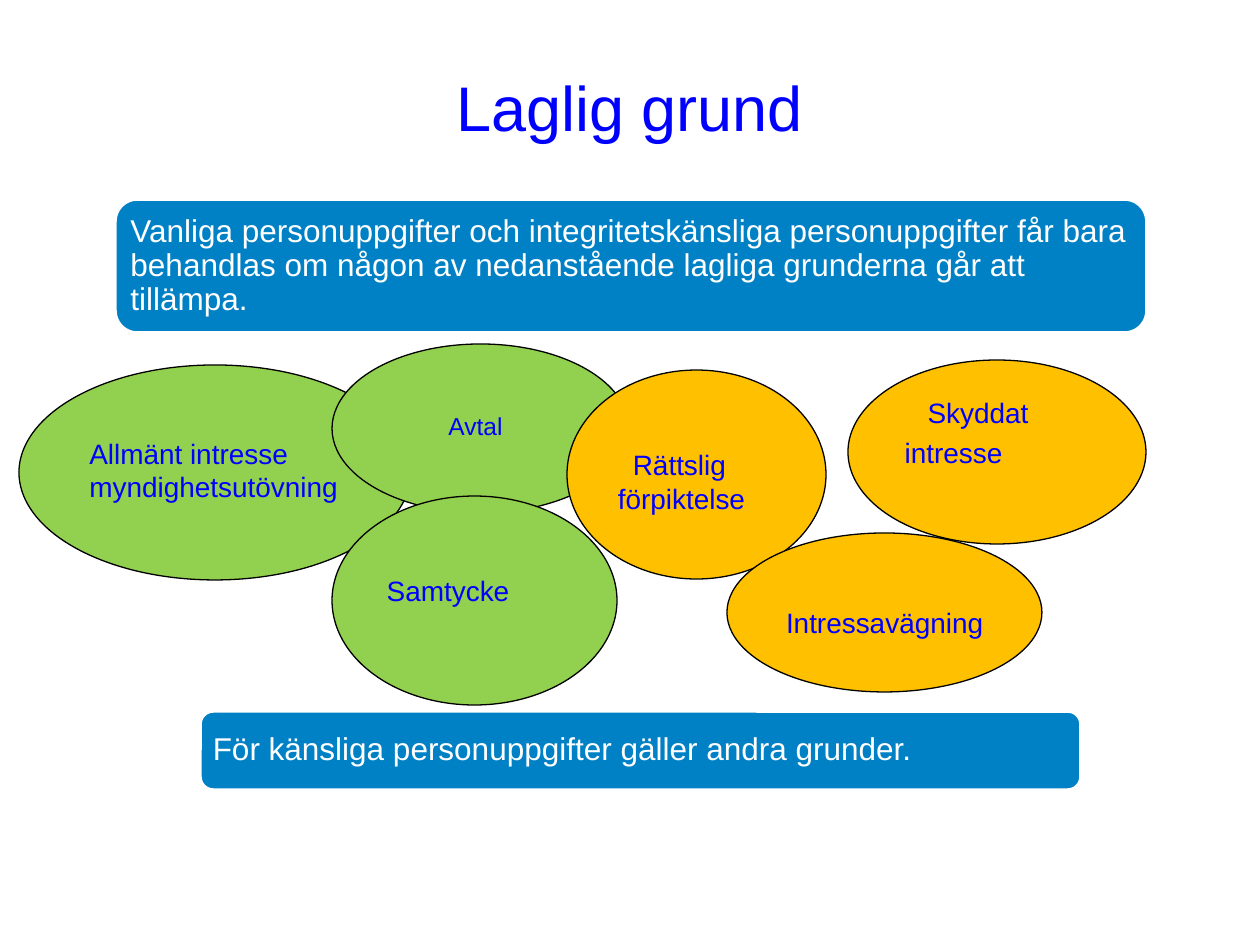
from pptx import Presentation
from pptx.dml.color import RGBColor
from pptx.enum.shapes import MSO_SHAPE
from pptx.enum.text import MSO_ANCHOR, PP_ALIGN
from pptx.util import Pt

ROUNDED, OVAL = MSO_SHAPE.ROUNDED_RECTANGLE, MSO_SHAPE.OVAL
TOP, MIDDLE = MSO_ANCHOR.TOP, MSO_ANCHOR.MIDDLE
LEFT, CENTER = PP_ALIGN.LEFT, PP_ALIGN.CENTER
PX = 914400 // 126
OVAL_INSET = 0.1464


def rgb(color):
    return RGBColor.from_string(color)


def write(p, text, size, color, align=LEFT):
    p.alignment = align
    r = p.add_run()
    r.text = text
    r.font.name = "Arial"
    r.font.size = Pt(size)
    r.font.color.rgb = rgb(color)


prs = Presentation()
prs.slide_width, prs.slide_height = 1260 * PX, 945 * PX
s = prs.slides.add_slide(prs.slide_layouts[5])

title = s.shapes.title
title.left, title.top, title.width, title.height = [v * PX for v in (94, 56, 1071, 100)]
title.text_frame.vertical_anchor = MIDDLE
write(title.text_frame.paragraphs[0], "Laglig grund", 36, "0000FF", CENTER)

boxes = [
    ((115, 199, 1032, 134), "Vanliga personuppgifter och integritetskänsliga personuppgifter "
     "får bara behandlas om någon av nedanstående lagliga grunderna går att tillämpa."),
    ((200, 711, 881, 79), "För känsliga personuppgifter gäller andra grunder."),
]
for box, text in boxes:
    sp = s.shapes.add_shape(ROUNDED, *[v * PX for v in box])
    sp.shadow.inherit = False
    sp.fill.solid()
    sp.fill.fore_color.rgb = rgb("0081C5")
    sp.line.color.rgb = rgb("FFFFFF")
    sp.line.width = Pt(2)
    tf = sp.text_frame
    tf.word_wrap = True
    tf.vertical_anchor = MIDDLE
    tf.margin_left = tf.margin_right = tf.margin_top = tf.margin_bottom = 9 * PX
    p = tf.paragraphs[0]
    p.line_spacing = 0.9
    write(p, text, 18, "FFFFFF")

GREEN, AMBER = "92D050", "FFC000"
ovals = [
    ((19, 365, 392, 215), GREEN, (89, 436), 0, 16, ["Allmänt intresse myndighetsutövning"]),
    ((332, 344, 297, 169), GREEN, (448, 411), 0, 14, ["Avtal"]),
    ((332, 496, 285, 209), GREEN, (387, 574), 0, 16, ["Samtycke"]),
    ((567, 370, 259, 209), AMBER, (618, 448), 15, 16, ["Rättslig förpiktelse"]),
    ((848, 360, 298, 184), AMBER, (905, 396), 23, 16, ["Skyddat", "intresse"]),
    ((727, 533, 315, 159), AMBER, (786, 605), 0, 16, ["Intressavägning"]),
]
for (x, y, w, h), fill, (text_x, text_y), indent, size, lines in ovals:
    sp = s.shapes.add_shape(OVAL, x * PX, y * PX, w * PX, h * PX)
    sp.shadow.inherit = False
    sp.fill.solid()
    sp.fill.fore_color.rgb = rgb(fill)
    sp.line.color.rgb = rgb("000000")
    sp.line.width = Pt(0.75)
    tf = sp.text_frame
    tf.word_wrap = True
    tf.vertical_anchor = TOP
    tf.margin_left = round(text_x - x - w * OVAL_INSET) * PX
    tf.margin_top = round(text_y - y - h * OVAL_INSET) * PX
    tf.margin_right = tf.margin_bottom = 0
    for i, line in enumerate(lines):
        p = tf.add_paragraph() if i else tf.paragraphs[0]
        if i:
            p.space_before = Pt(3.2)
        elif indent:
            p._p.get_or_add_pPr().set("indent", str(indent * PX))
        write(p, line, size, "0000FF")

prs.save("out.pptx")
